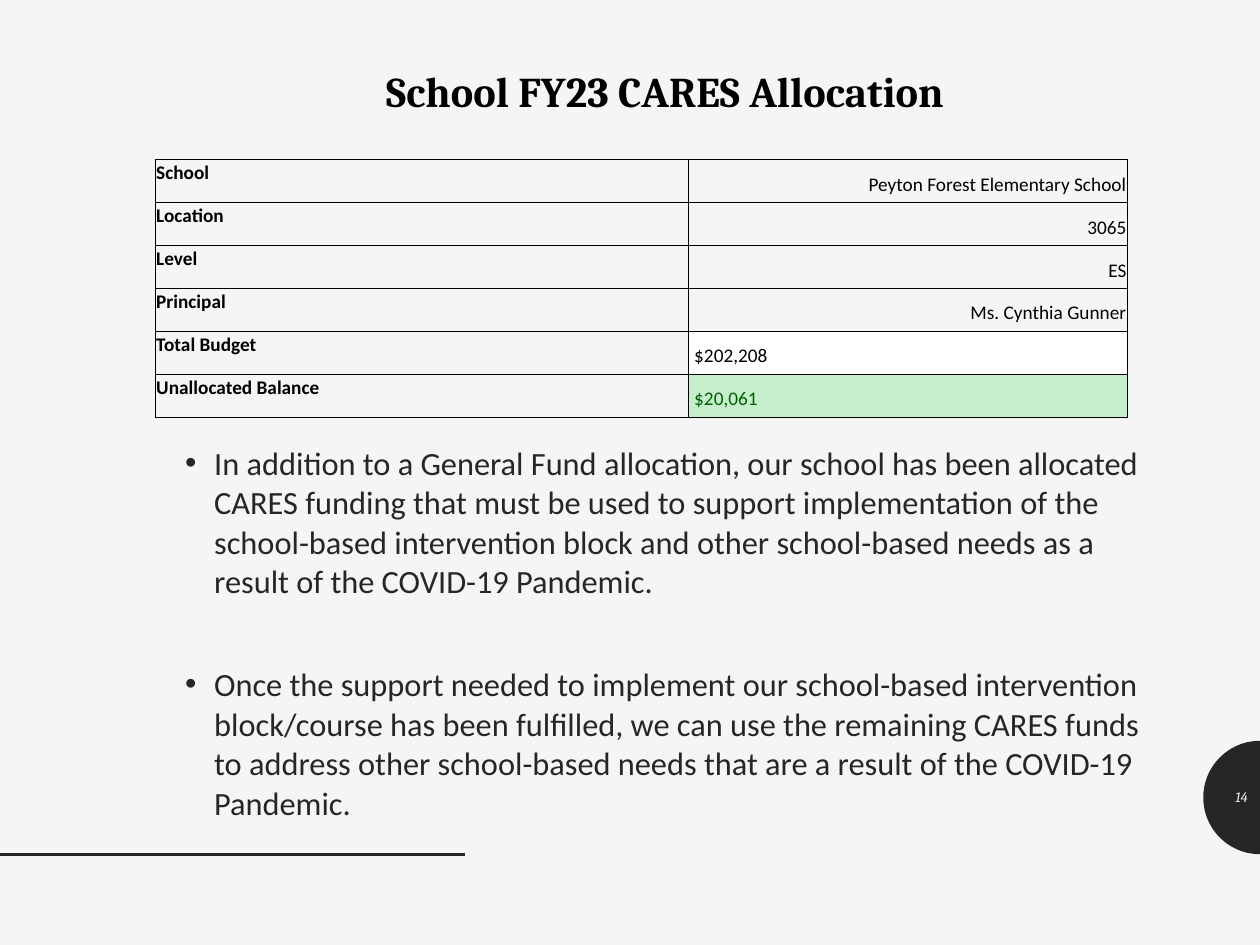
import math

import pptx
import pptx.dml.color
import pptx.enum.shapes
import pptx.enum.text
import pptx.oxml
import pptx.oxml.ns
import pptx.util

RGBColor = pptx.dml.color.RGBColor
PAPER = RGBColor(0xF5, 0xF5, 0xF5)
CHARCOAL = RGBColor(0x26, 0x26, 0x26)
BLACK = RGBColor(0, 0, 0)
WHITE = RGBColor(0xFF, 0xFF, 0xFF)
GREEN_TEXT = RGBColor(0, 0x61, 0)
GREEN_FILL = RGBColor(0xC6, 0xEF, 0xCE)

ALIGN = pptx.enum.text.PP_ALIGN
ANCHOR = pptx.enum.text.MSO_ANCHOR
NAMESPACE = pptx.oxml.ns.nsdecls("a")


def write(para, text, *, size, font="Calibri", color=BLACK, bold=False,
          italic=False, align=ALIGN.LEFT, spacing=None):
    para.alignment = align
    if spacing:
        para.line_spacing = spacing
    span = para.add_run()
    span.text = text
    span.font.size = pptx.util.Pt(size)
    span.font.name = font
    span.font.color.rgb = color
    span.font.bold = bold
    span.font.italic = italic


deck = pptx.Presentation()
deck.slide_width = pptx.util.Inches(10)
deck.slide_height = pptx.util.Inches(7.5)
COLUMN = deck.slide_width / 100
ROW = deck.slide_height / 100


def place(shape, left, top, width, height):
    """Position a shape in hundredths of the slide's width and height."""
    shape.left, shape.width = int(left * COLUMN), int(width * COLUMN)
    shape.top, shape.height = int(top * ROW), int(height * ROW)


page = deck.slides.add_slide(deck.slide_layouts.get_by_name("Title and Content"))
page.background.fill.solid()
page.background.fill.fore_color.rgb = PAPER

# Half disc on the right edge, with the rule level with its foot
radius = 4.5 * COLUMN
center_y = 84.4 * ROW
angles = [math.radians(90 + step * 3) for step in range(61)]
points = [(int(100 * COLUMN + radius * math.cos(angle)),
           int(center_y + radius * math.sin(angle))) for angle in angles]
builder = page.shapes.build_freeform(*points[0])
builder.add_line_segments(points[1:], close=True)
half_disc = builder.convert_to_shape()
half_disc.shadow.inherit = False
half_disc.fill.solid()
half_disc.fill.fore_color.rgb = CHARCOAL
half_disc.line.fill.background()

rule_y = int(90.4 * ROW)
rule = page.shapes.add_connector(pptx.enum.shapes.MSO_CONNECTOR.STRAIGHT,
                                 0, rule_y, int(36.9 * COLUMN), rule_y)
rule.line.color.rgb = CHARCOAL
rule.line.width = pptx.util.Pt(2)
rule._element.spPr.append(pptx.oxml.parse_xml(f"<a:effectLst {NAMESPACE}/>"))

number_box = page.shapes.add_textbox(0, 0, 0, 0)
place(number_box, 95.5, 81.7, 4.5, 5.3)
number_box.text_frame.word_wrap = True
number_box.text_frame.vertical_anchor = ANCHOR.MIDDLE
write(number_box.text_frame.paragraphs[0], "14", size=8.2, font="Cambria",
      color=PAPER, italic=True, align=ALIGN.RIGHT)

# Title
title = page.shapes.title
place(title, 7.8, 7.2, 90, 5.7)
title.text_frame.auto_size = pptx.enum.text.MSO_AUTO_SIZE.NONE
title.text_frame.vertical_anchor = ANCHOR.MIDDLE
write(title.text_frame.paragraphs[0], "School FY23 CARES Allocation", size=24.2,
      font="Cambria", bold=True, align=ALIGN.CENTER, spacing=0.8)

# Bulleted list
bullets = [
    "In addition to a General Fund allocation, our school has been allocated "
    "CARES funding that must be used to support implementation of the "
    "school-based intervention block and other school-based needs as a result "
    "of the COVID-19 Pandemic.",
    "Once the support needed to implement our school-based intervention "
    "block/course has been fulfilled, we can use the remaining CARES funds to "
    "address other school-based needs that are a result of the COVID-19 Pandemic.",
]
body = page.placeholders[1]
place(body, 13.7, 46.1, 78.5, 43.6)
body.text_frame.auto_size = pptx.enum.text.MSO_AUTO_SIZE.NONE
hang = pptx.util.Inches(0.23)
for index, text in enumerate(bullets):
    para = body.text_frame.add_paragraph() if index else body.text_frame.paragraphs[0]
    properties = para._p.get_or_add_pPr()
    properties.set("marL", str(hang))
    properties.set("indent", str(-hang))
    properties.append(pptx.oxml.parse_xml(f'<a:buChar {NAMESPACE} char="•"/>'))
    para.space_before = pptx.util.Pt(36 if index else 0)
    write(para, text, size=18.5, color=CHARCOAL, spacing=1.02)

# Budget table: label, value, value alignment, value fill, value colour
budget = [
    ("School", "Peyton Forest Elementary School", ALIGN.RIGHT, None, BLACK),
    ("Location", "3065", ALIGN.RIGHT, None, BLACK),
    ("Level", "ES", ALIGN.RIGHT, None, BLACK),
    ("Principal", "Ms. Cynthia Gunner", ALIGN.RIGHT, None, BLACK),
    ("Total Budget", "$202,208", ALIGN.LEFT, WHITE, BLACK),
    ("Unallocated Balance", "$20,061", ALIGN.LEFT, GREEN_FILL, GREEN_TEXT),
]
frame = page.shapes.add_table(len(budget), 2, 0, 0, 100, 100)
place(frame, 12.3, 16.9, 77.2, 27.3)
table = frame.table
table.first_row = table.horz_banding = False
for column, share in zip(table.columns, (42.3, 34.9)):
    column.width = int(share * COLUMN)
for row, (label, value, align, fill, color) in zip(table.rows, budget):
    row.height = int(4.55 * ROW)
    label_cell, value_cell = row.cells
    for cell in row.cells:
        cell.margin_left = cell.margin_right = cell.margin_top = pptx.util.Inches(0.01)
        cell.margin_bottom = pptx.util.Inches(0.05)
        for side in ("lnL", "lnR", "lnT", "lnB"):
            cell._tc.get_or_add_tcPr().append(pptx.oxml.parse_xml(
                f'<a:{side} {NAMESPACE} w="{pptx.util.Pt(0.5)}"><a:solidFill>'
                f'<a:srgbClr val="{BLACK}"/></a:solidFill></a:{side}>'))
        cell.fill.background()
    if fill is not None:
        value_cell.fill.solid()
        value_cell.fill.fore_color.rgb = fill
        value_cell.margin_left = pptx.util.Inches(0.05)
    value_cell.vertical_anchor = ANCHOR.BOTTOM
    write(label_cell.text_frame.paragraphs[0], label, size=11, bold=True)
    write(value_cell.text_frame.paragraphs[0], value, size=11, color=color, align=align)

deck.save("out.pptx")
